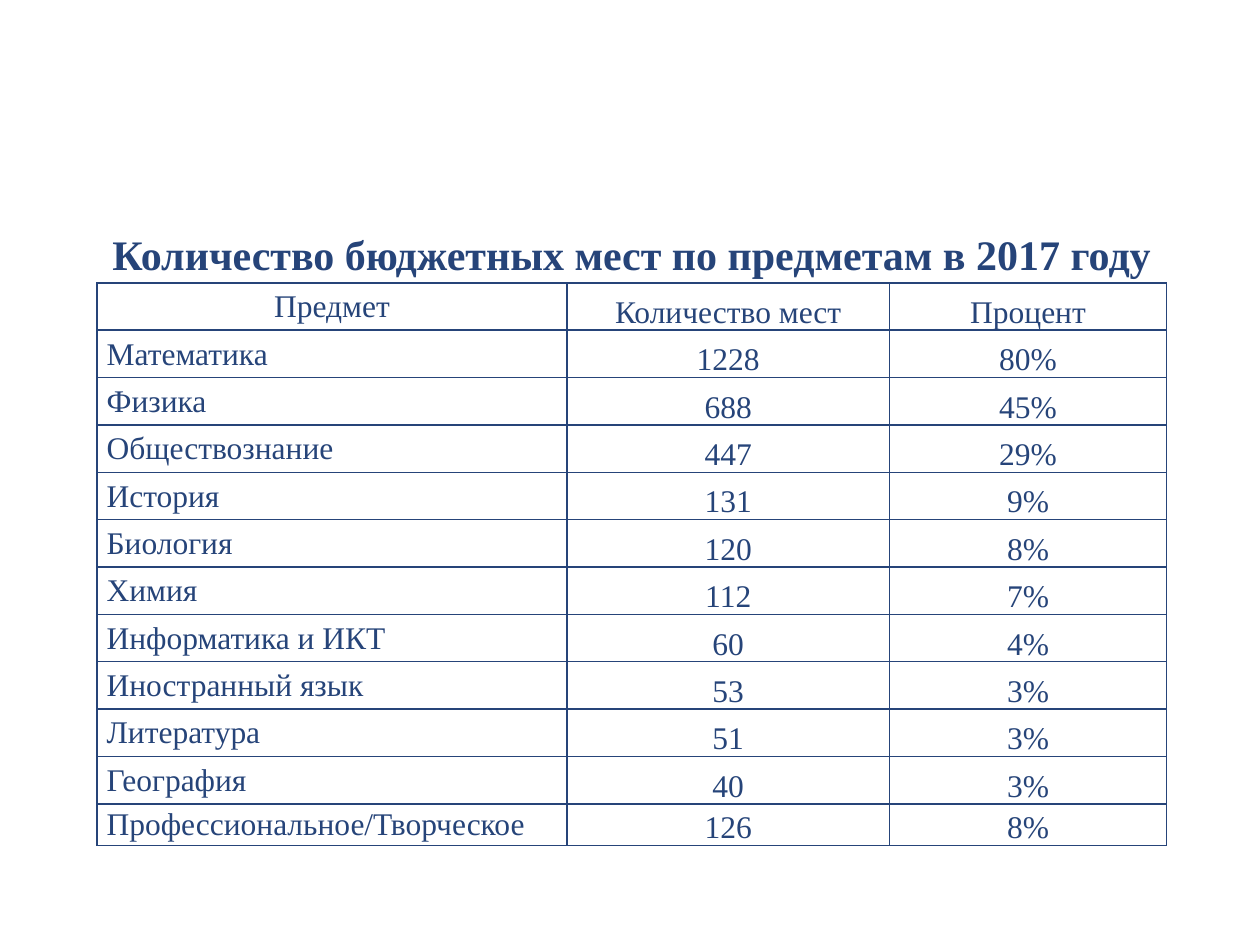
"""Build a slide with a table of state-funded places by subject."""
from lxml import etree
from pptx import Presentation
from pptx import util as u
from pptx.dml.color import RGBColor
from pptx.enum import text as t
from pptx.oxml import ns

TITLE = "Количество бюджетных мест по предметам в 2017 году"
ROWS = [
    ("Предмет", "Количество мест", "Процент"),
    ("Математика", "1228", "80%"),
    ("Физика", "688", "45%"),
    ("Обществознание", "447", "29%"),
    ("История", "131", "9%"),
    ("Биология", "120", "8%"),
    ("Химия", "112", "7%"),
    ("Информатика и ИКТ", "60", "4%"),
    ("Иностранный язык", "53", "3%"),
    ("Литература", "51", "3%"),
    ("География", "40", "3%"),
    ("Профессиональное/Творческое", "126", "8%"),
]
WIDTHS = [9.47, 6.5, 5.59]
HIGH, LAST = 11.35, 0.84
NAVY = RGBColor(0x26, 0x44, 0x79)
WHITE = RGBColor(0xFF, 0xFF, 0xFF)
FONT = "Times New Roman"


def write(frame, words, size=18, bold=False, align=t.PP_ALIGN.CENTER):
    para = frame.paragraphs[0]
    para.alignment = align
    run = para.add_run()
    run.text = words
    run.font.name, run.font.size, run.font.bold = FONT, u.Pt(size), bold
    run.font.color.rgb = NAVY


def border(cell):
    props = cell._tc.get_or_add_tcPr()
    for side in ("lnL", "lnR", "lnT", "lnB"):
        line = etree.SubElement(props, ns.qn(f"a:{side}"), w=str(u.Pt(1)))
        fill = etree.SubElement(line, ns.qn("a:solidFill"))
        etree.SubElement(fill, ns.qn("a:srgbClr"), val=str(NAVY))


def style(cell, first, head):
    cell.margin_left = u.Cm(0.19 if first and not head else 0.02)
    cell.margin_right = cell.margin_top = u.Cm(0.02)
    cell.margin_bottom = 0
    cell.vertical_anchor = t.MSO_ANCHOR.MIDDLE if first else t.MSO_ANCHOR.BOTTOM
    border(cell)
    cell.fill.solid()
    cell.fill.fore_color.rgb = WHITE


def main():
    deck = Presentation()
    deck.slide_width, deck.slide_height = u.Cm(25.4), u.Cm(19.05)
    slide = deck.slides.add_slide(deck.slide_layouts[5])

    grid = slide.shapes.add_table(
        len(ROWS), len(WIDTHS), u.Cm(1.96), u.Cm(5.7), u.Cm(sum(WIDTHS)), u.Cm(HIGH)
    ).table
    grid.first_row = grid.horz_banding = False
    for col, wide in zip(grid.columns, WIDTHS):
        col.width = u.Cm(wide)
    for row in grid.rows:
        row.height = u.Cm((HIGH - LAST) / (len(ROWS) - 1))
    grid.rows[len(ROWS) - 1].height = u.Cm(LAST)

    for r, row in enumerate(ROWS):
        for c, words in enumerate(row):
            cell = grid.cell(r, c)
            style(cell, c == 0, r == 0)
            left = c == 0 and r > 0
            write(cell.text_frame, words,
                  align=t.PP_ALIGN.LEFT if left else t.PP_ALIGN.CENTER)

    title = slide.shapes.title
    title.left, title.top = u.Cm(1.7), u.Cm(4.47)
    title.width, title.height = u.Cm(22.07), u.Cm(1.27)
    frame = title.text_frame
    frame.word_wrap = True
    frame.auto_size = t.MSO_AUTO_SIZE.SHAPE_TO_FIT_TEXT
    frame.vertical_anchor = t.MSO_ANCHOR.TOP
    write(frame, TITLE, size=24, bold=True)
    deck.save("out.pptx")


if __name__ == "__main__":
    main()
